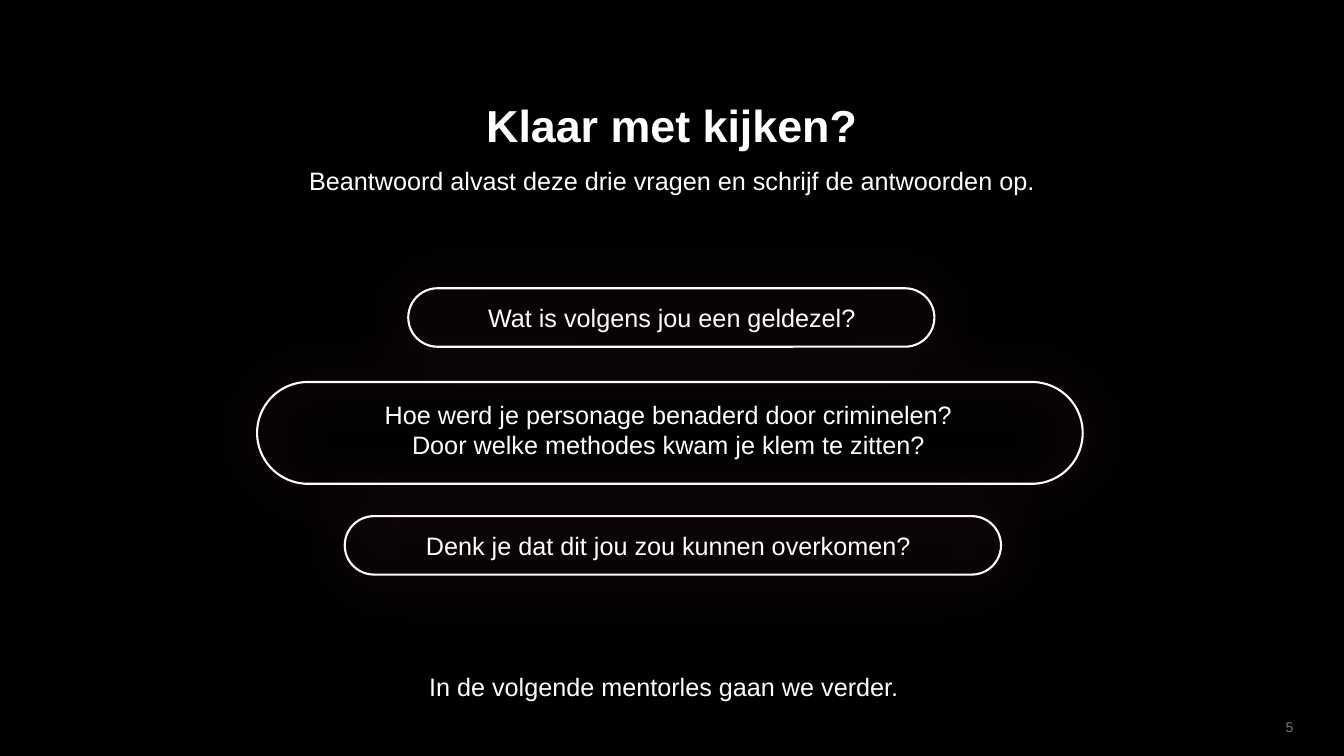
"""Build the closing slide with three questions for the mentor lesson."""
from lxml import etree
from pptx import Presentation
from pptx import util as u
from pptx.dml.color import RGBColor
from pptx.enum import shapes, text
from pptx.oxml.ns import qn

COLORS = {"background": "000000", "text": "FFFFFF", "number": "797979", "glow": "C8539F"}
FONT = "Arial"

presentation = Presentation()
presentation.slide_width = u.Inches(13.333)
presentation.slide_height = u.Inches(7.5)
column = presentation.slide_width / 100
row = presentation.slide_height / 100


def grid(left, top, width, height):
    return [round(n * step) for n, step in zip((left, top, width, height), (column, row) * 2)]


def write(shape, words, size=18, color="text", bold=False,
          align=text.PP_ALIGN.CENTER, anchor=text.MSO_ANCHOR.TOP):
    frame = shape.text_frame
    frame.word_wrap = True
    frame.auto_size = text.MSO_AUTO_SIZE.NONE
    frame.vertical_anchor = anchor
    frame.text = words
    for paragraph in frame.paragraphs:
        paragraph.alignment = align
        paragraph.font.name = FONT
        paragraph.font.size = u.Pt(size)
        paragraph.font.bold = bold
        paragraph.font.color.rgb = RGBColor.from_string(COLORS[color])


slide = presentation.slides.add_slide(presentation.slide_layouts[5])
slide.background.fill.solid()
slide.background.fill.fore_color.rgb = RGBColor.from_string(COLORS["background"])

title = slide.shapes.title
title.left, title.top, title.width, title.height = grid(20.4, 12.27, 59.18, 8.53)
write(title, "Klaar met kijken?", size=32, bold=True)

number = slide.shapes.add_textbox(*grid(74.48, 93.47, 22.5, 5.33))
write(number, "5", size=10, color="number",
      align=text.PP_ALIGN.RIGHT, anchor=text.MSO_ANCHOR.MIDDLE)

for left, top, words in [
    (20.4, 21.2, "Beantwoord alvast deze drie vragen en schrijf de antwoorden op."),
    (19.8, 88.13, "In de volgende mentorles gaan we verder."),
]:
    write(slide.shapes.add_textbox(*grid(left, top, 59.18, 5.33)), words)

questions = [
    ((30.38, 38.13, 39.15, 7.73), (24.3, 39.33, 51.38, 5.33),
     "Wat is volgens jou een geldezel?"),
    ((19.13, 50.53, 61.43, 13.47), (22.35, 52.13, 55.28, 11.07),
     "Hoe werd je personage benaderd door criminelen? \n"
     "Door welke methodes kwam je klem te zitten? "),
    ((25.65, 68.27, 48.83, 7.73), (24.3, 69.47, 51.38, 5.33),
     "Denk je dat dit jou zou kunnen overkomen? "),
]
for pill_area, label_area, words in questions:
    group = slide.shapes.add_group_shape()
    pill = group.shapes.add_shape(shapes.MSO_SHAPE.ROUNDED_RECTANGLE, *grid(*pill_area))
    pill.adjustments[0] = 0.5
    pill.fill.background()
    pill.line.color.rgb = RGBColor.from_string(COLORS["text"])
    pill.line.width = u.Pt(1.5)
    pill.shadow.inherit = False
    effects = pill.element.spPr.find(qn("a:effectLst"))
    glow = etree.SubElement(effects, qn("a:outerShdw"), blurRad=str(u.Pt(42.4)),
                            dist="0", dir="0", algn="ctr", rotWithShape="0")
    etree.SubElement(glow, qn("a:srgbClr"), val=COLORS["glow"])
    write(group.shapes.add_textbox(*grid(*label_area)), words)

presentation.save("out.pptx")
